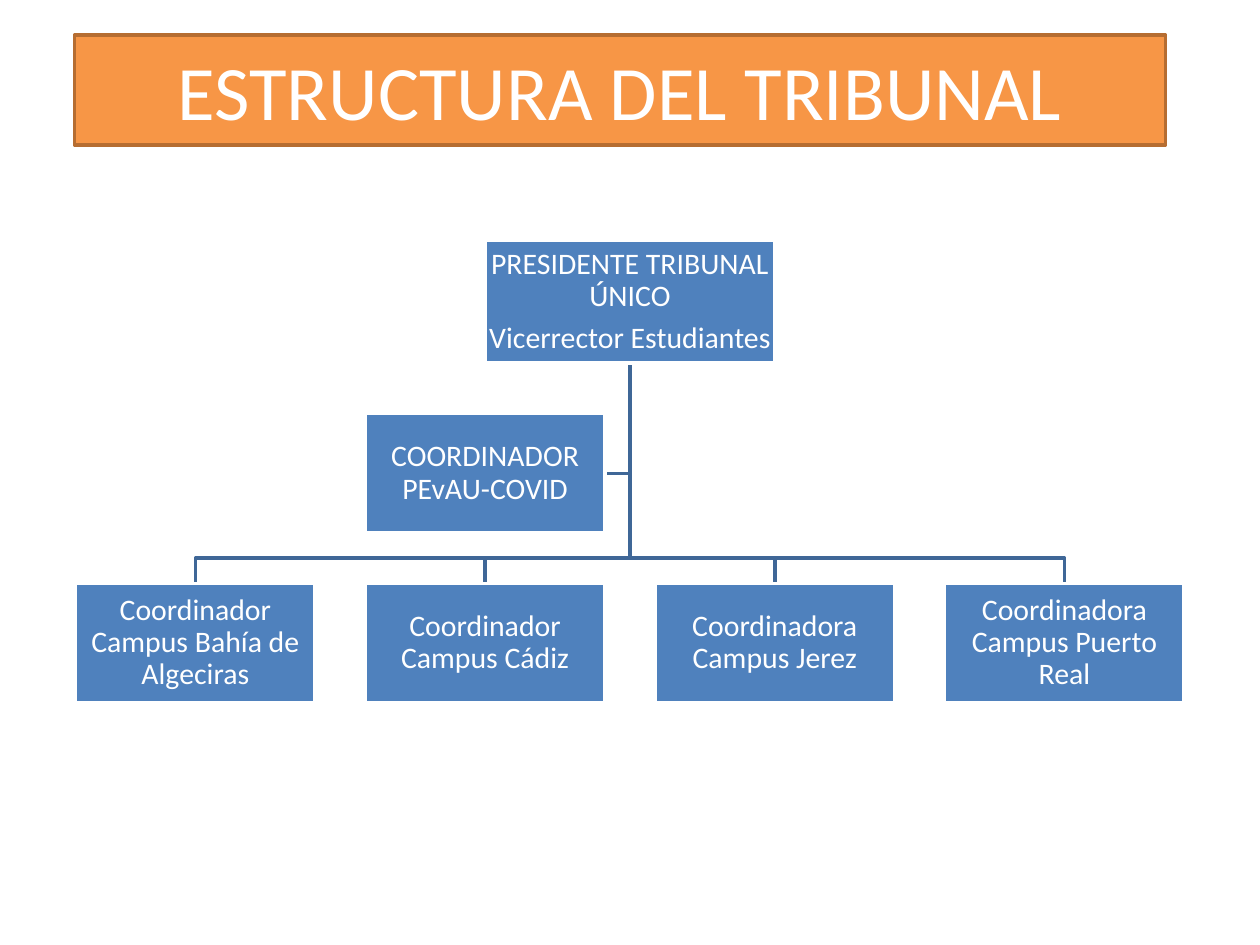
"""Build the organisation chart slide of the examination board."""
import pptx
import pptx.dml.color
import pptx.enum.shapes
import pptx.enum.text
import pptx.util

Cm = pptx.util.Cm
Pt = pptx.util.Pt


class Theme:
    font = "Calibri"
    white = pptx.dml.color.RGBColor.from_string("FFFFFF")
    orange = pptx.dml.color.RGBColor.from_string("F79646")
    dark_orange = pptx.dml.color.RGBColor.from_string("B66D31")
    blue = pptx.dml.color.RGBColor.from_string("4F81BD")
    dark_blue = pptx.dml.color.RGBColor.from_string("3F6797")
    title_size = Pt(44)
    box_size = Pt(17)
    line_width = Pt(2)
    line_spacing = 0.9
    space_after = Pt(6)


def add_box(slide, left, top, width, height, texts, fill, line, size, margins):
    shape = slide.shapes.add_shape(
        pptx.enum.shapes.MSO_SHAPE.RECTANGLE, Cm(left), Cm(top), Cm(width), Cm(height))
    shape.shadow.inherit = False
    shape.fill.solid()
    shape.fill.fore_color.rgb = fill
    shape.line.color.rgb = line
    shape.line.width = Theme.line_width
    frame = shape.text_frame
    frame.word_wrap = True
    frame.vertical_anchor = pptx.enum.text.MSO_ANCHOR.MIDDLE
    frame.margin_left = frame.margin_right = Cm(margins[0])
    frame.margin_top = frame.margin_bottom = Cm(margins[1])
    for index, text in enumerate(texts):
        paragraph = frame.add_paragraph() if index else frame.paragraphs[0]
        paragraph.alignment = pptx.enum.text.PP_ALIGN.CENTER
        run = paragraph.add_run()
        run.text = text
        run.font.name = Theme.font
        run.font.size = size
        run.font.color.rgb = Theme.white
    return shape


presentation = pptx.Presentation()
presentation.slide_width = Cm(25.4)
presentation.slide_height = Cm(19.05)
slide = presentation.slides.add_slide(presentation.slide_layouts[6])

add_box(slide, 1.5, 0.71, 22, 2.21, ["ESTRUCTURA DEL TRIBUNAL"],
        Theme.orange, Theme.dark_orange, Theme.title_size, (0.25, 0.13))

center = 12.7
box_width, box_height, pitch = 4.83, 2.41, 5.84
president_width, president_top, president_bottom = 5.84, 4.85, 7.32
assistant_top = 8.34
bus, campus_top = 11.25, 11.76
campuses = [
    "Coordinador Campus Bahía de Algeciras",
    "Coordinador Campus Cádiz",
    "Coordinadora Campus Jerez",
    "Coordinadora Campus Puerto Real",
]
campus_centers = [center + (index - 1.5) * pitch for index in range(len(campuses))]
assistant_left = campus_centers[1] - box_width / 2
assistant_middle = assistant_top + box_height / 2

branches = [[(center, assistant_middle), (assistant_left + box_width, assistant_middle)]]
for campus_center in campus_centers:
    branches.append([(center, bus), (campus_center, bus), (campus_center, campus_top)])

for branch in branches:
    builder = slide.shapes.build_freeform(Cm(center), Cm(president_bottom))
    builder.add_line_segments([(Cm(x), Cm(y)) for x, y in branch], close=False)
    shape = builder.convert_to_shape()
    shape.shadow.inherit = False
    shape.fill.background()
    shape.line.color.rgb = Theme.dark_blue
    shape.line.width = Theme.line_width

boxes = [(center - president_width / 2, president_top, president_width,
          president_bottom - president_top,
          ["PRESIDENTE TRIBUNAL ÚNICO", "Vicerrector Estudiantes"])]
for campus_center, campus in zip(campus_centers, campuses):
    boxes.append((campus_center - box_width / 2, campus_top, box_width, box_height, [campus]))
boxes.append((assistant_left, assistant_top, box_width, box_height, ["COORDINADOR PEvAU-COVID"]))

for box in boxes:
    shape = add_box(slide, *box, Theme.blue, Theme.white, Theme.box_size, (0.03, 0.03))
    for paragraph in shape.text_frame.paragraphs:
        paragraph.line_spacing = Theme.line_spacing
        paragraph.space_after = Theme.space_after

presentation.save("out.pptx")
